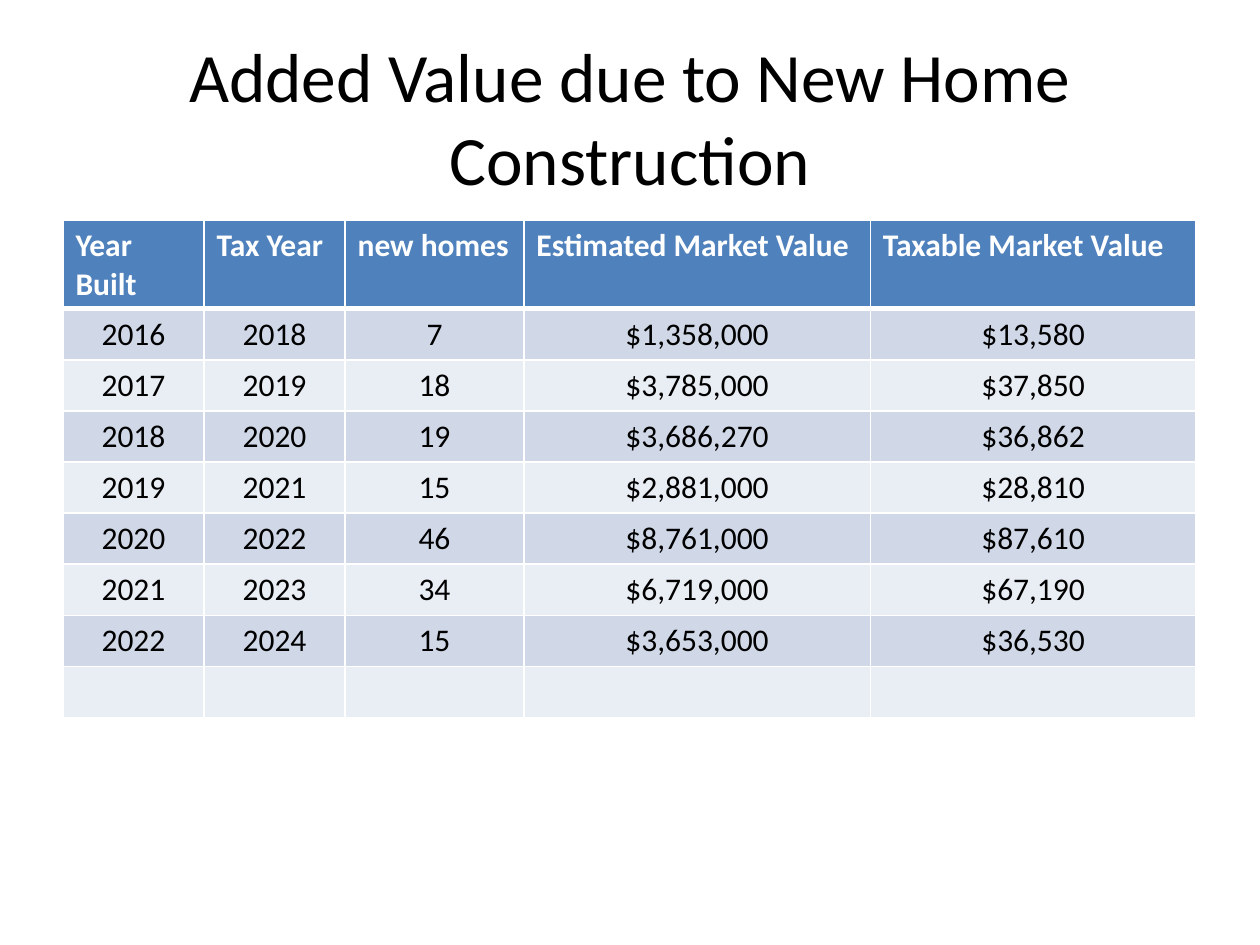
import dataclasses
import typing

import lxml.etree
import pptx
import pptx.dml.color
import pptx.enum.text
import pptx.oxml.ns
import pptx.util

Pt = pptx.util.Pt
Align = pptx.enum.text.PP_ALIGN


@dataclasses.dataclass(frozen=True)
class Theme:
    font: str = "Calibri"
    title: float = 39.6
    body: float = 18
    ink: str = "000000"
    white: str = "FFFFFF"
    head: str = "4F81BD"
    bands: tuple[str, str] = ("D0D8E8", "E9EDF4")
    thin: float = 1
    thick: float = 3


class Column(typing.NamedTuple):
    label: str
    width: float


class Year(typing.NamedTuple):
    built: int
    homes: int
    market: str
    taxed: str

    def texts(self) -> list[str]:
        return [str(self.built), str(self.built + 2), str(self.homes), self.market, self.taxed]


THEME = Theme()
COLUMNS = [
    Column("Year Built", 80.6),
    Column("Tax Year", 80.6),
    Column("new homes", 102.2),
    Column("Estimated Market Value", 198),
    Column("Taxable Market Value", 186),
]
YEARS = [
    Year(2016, 7, "$1,358,000", "$13,580"),
    Year(2017, 18, "$3,785,000", "$37,850"),
    Year(2018, 19, "$3,686,270", "$36,862"),
    Year(2019, 15, "$2,881,000", "$28,810"),
    Year(2020, 46, "$8,761,000", "$87,610"),
    Year(2021, 34, "$6,719,000", "$67,190"),
    Year(2022, 15, "$3,653,000", "$36,530"),
]
HEAD_HIGH, ROW_HIGH = 50.4, 29.2


def write(frame, text: str, size: float, color: str, align: Align, bold: bool = False) -> None:
    para = frame.paragraphs[0]
    para.text = text
    para.alignment = align
    para.font.name = THEME.font
    para.font.size = Pt(size)
    para.font.bold = bold
    para.font.color.rgb = pptx.dml.color.RGBColor.from_string(color)


def edge(cell, side: str, width: float) -> None:
    name = pptx.oxml.ns.qn
    props = cell._tc.get_or_add_tcPr()
    line = lxml.etree.SubElement(props, name(f"a:ln{side}"), w=str(Pt(width)))
    fill = lxml.etree.SubElement(line, name("a:solidFill"))
    lxml.etree.SubElement(fill, name("a:srgbClr"), val=THEME.white)


def paint(cell, row: int) -> None:
    tops = {0: THEME.thin, 1: THEME.thick}
    edge(cell, "L", THEME.thin)
    edge(cell, "R", THEME.thin)
    edge(cell, "T", tops.get(row, THEME.thin))
    edge(cell, "B", tops.get(row + 1, THEME.thin))
    color = THEME.bands[(row - 1) % 2] if row else THEME.head
    cell.fill.solid()
    cell.fill.fore_color.rgb = pptx.dml.color.RGBColor.from_string(color)


def draw_title(slide, text: str) -> None:
    frame = slide.shapes.add_textbox(Pt(36), Pt(21.6), Pt(648), Pt(90)).text_frame
    frame.word_wrap = True
    frame.vertical_anchor = pptx.enum.text.MSO_ANCHOR.MIDDLE
    write(frame, text, THEME.title, THEME.ink, Align.CENTER)


def draw_table(slide, columns: list[Column], years: list[Year]) -> None:
    rows = [[col.label for col in columns], *(year.texts() for year in years), [""] * len(columns)]
    wide = sum(col.width for col in columns)
    high = HEAD_HIGH + ROW_HIGH * (len(rows) - 1)
    table = slide.shapes.add_table(
        len(rows), len(columns), Pt(36), Pt(126), Pt(wide), Pt(high)
    ).table
    for slot, col in zip(table.columns, columns):
        slot.width = Pt(col.width)
    for row, texts in enumerate(rows):
        table.rows[row].height = Pt(ROW_HIGH if row else HEAD_HIGH)
        color, align = (THEME.ink, Align.CENTER) if row else (THEME.white, Align.LEFT)
        for col, text in enumerate(texts):
            cell = table.cell(row, col)
            paint(cell, row)
            write(cell.text_frame, text, THEME.body, color, align, bold=row == 0)


def main() -> None:
    """Build the slide on value added by new homes."""
    deck = pptx.Presentation()
    deck.slide_width, deck.slide_height = Pt(720), Pt(540)
    slide = deck.slides.add_slide(deck.slide_layouts[6])
    draw_title(slide, "Added Value due to New Home Construction")
    draw_table(slide, COLUMNS, YEARS)
    deck.save("out.pptx")


if __name__ == "__main__":
    main()
